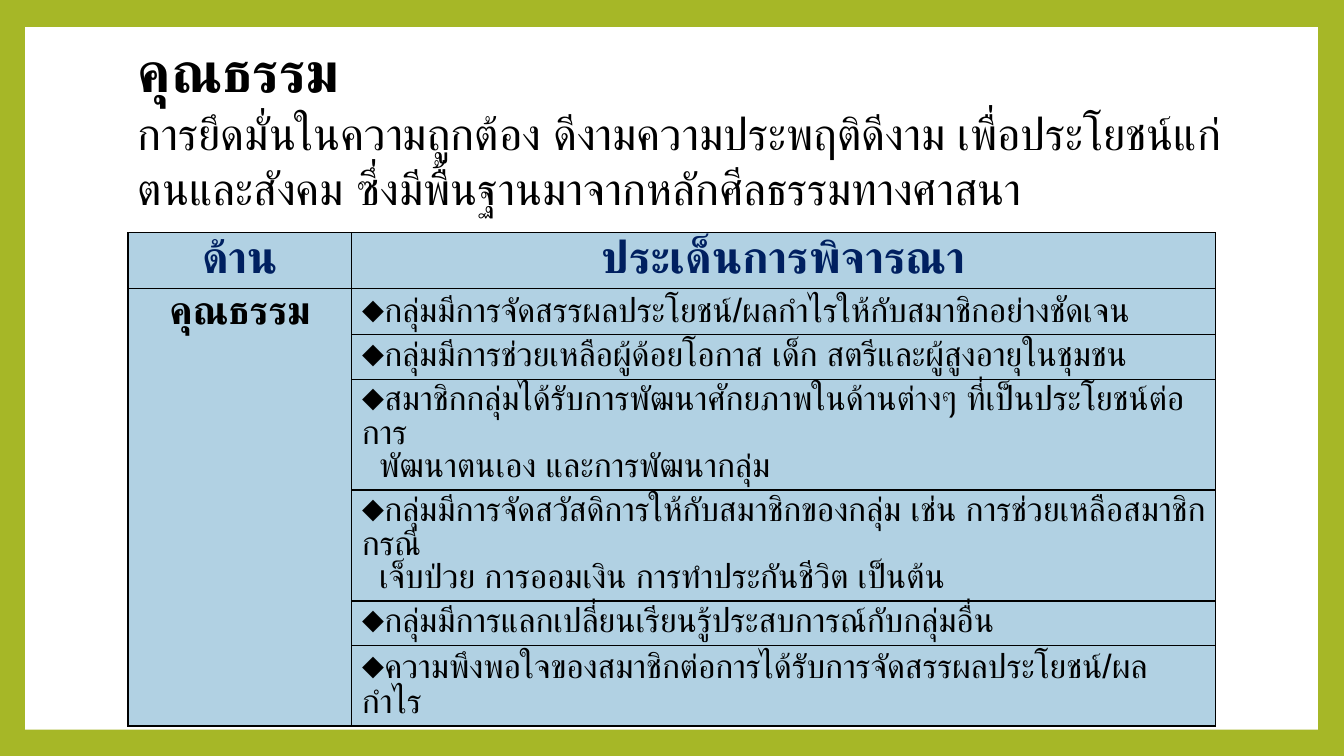
from pptx import Presentation
from pptx.dml.color import RGBColor
from pptx.enum.shapes import MSO_SHAPE
from pptx.enum.text import PP_ALIGN
from pptx.oxml import parse_xml
from pptx.oxml.ns import nsdecls
from pptx.util import Inches, Pt
from lxml.etree import SubElement
from pptx.oxml.ns import qn

COLORS = {
    "frame": "A6B727",
    "paper": "FFFFFF",
    "cell": "B1D1E3",
    "ink": "000000",
    "header": "002060",
}
FONT = "Arial"
LEFT = 1.27
COLUMNS = [2.22, 8.57]
INDENT = 0.17

TITLE = "คุณธรรม"
DEFINITION = (
    "การยึดมั่นในความถูกต้อง ดีงามความประพฤติดีงาม เพื่อประโยชน์แก่ตนและสังคม "
    "ซึ่งมีพื้นฐานมาจากหลักศีลธรรมทางศาสนา"
)
HEADERS = ["ด้าน", "ประเด็นการพิจารณา"]
HEADER_HEIGHT = 0.55
CRITERIA = [
    (0.46, 26, ["⬥กลุ่มมีการจัดสรรผลประโยชน์/ผลกำไรให้กับสมาชิกอย่างชัดเจน"]),
    (0.44, 24, ["⬥กลุ่มมีการช่วยเหลือผู้ด้อยโอกาส เด็ก สตรีและผู้สูงอายุในชุมชน"]),
    (1.1, 24, ["⬥สมาชิกกลุ่มได้รับการพัฒนาศักยภาพในด้านต่างๆ ที่เป็นประโยชน์ต่อการ",
               "พัฒนาตนเอง และการพัฒนากลุ่ม"]),
    (1.1, 24, ["⬥กลุ่มมีการจัดสวัสดิการให้กับสมาชิกของกลุ่ม เช่น การช่วยเหลือสมาชิกกรณี",
               "เจ็บป่วย การออมเงิน การทำประกันชีวิต เป็นต้น"]),
    (0.44, 24, ["⬥กลุ่มมีการแลกเปลี่ยนเรียนรู้ประสบการณ์กับกลุ่มอื่น"]),
    (0.8, 25, ["⬥ความพึงพอใจของสมาชิกต่อการได้รับการจัดสรรผลประโยชน์/ผลกำไร"]),
]


def rgb(name):
    return RGBColor.from_string(COLORS[name])


def write(p, text, size, leading, color="ink", bold=False, align=PP_ALIGN.LEFT):
    for key, value in {"alignment": align, "line_spacing": Pt(leading),
                       "space_before": Pt(0), "space_after": Pt(0)}.items():
        setattr(p, key, value)
    r = p.add_run()
    r.text = text
    for key, value in {"name": FONT, "size": Pt(size), "bold": bold}.items():
        setattr(r.font, key, value)
    r.font.color.rgb = rgb(color)
    SubElement(r.font._element, qn("a:cs")).set("typeface", FONT)


def add_paper(s):
    sp = s.shapes.add_shape(MSO_SHAPE.RECTANGLE, Inches(0.25), Inches(0.27),
                            Inches(12.82), Inches(6.97))
    sp.shadow.inherit = False
    sp.fill.solid()
    sp.fill.fore_color.rgb = rgb("paper")
    sp.line.fill.background()


def style_cell(cell):
    tcPr = cell._tc.get_or_add_tcPr()
    for side in ("lnL", "lnR", "lnT", "lnB"):
        tcPr.append(parse_xml(
            f'<a:{side} {nsdecls("a")} w="12700"><a:solidFill>'
            f'<a:srgbClr val="{COLORS["ink"]}"/></a:solidFill></a:{side}>'))
    cell.fill.solid()
    cell.fill.fore_color.rgb = rgb("cell")


def add_criteria_table(s):
    heights = [HEADER_HEIGHT] + [height for height, _, _ in CRITERIA]
    frame = s.shapes.add_table(len(heights), len(COLUMNS), Inches(LEFT), Inches(2.31),
                               Inches(sum(COLUMNS)), Inches(sum(heights)))
    table = frame.table
    table.first_row = table.horz_banding = False
    for column, width in zip(table.columns, COLUMNS):
        column.width = Inches(width)
    for row, height in zip(table.rows, heights):
        row.height = Inches(height)
        for cell in row.cells:
            style_cell(cell)

    for col, header in enumerate(HEADERS):
        write(table.cell(0, col).text_frame.paragraphs[0], header, 32, 32,
              "header", True, PP_ALIGN.CENTER)
    table.cell(1, 0).merge(table.cell(len(CRITERIA), 0))
    write(table.cell(1, 0).text_frame.paragraphs[0], TITLE, 28, 28,
          bold=True, align=PP_ALIGN.CENTER)
    for row, (_, leading, lines) in enumerate(CRITERIA, start=1):
        tf = table.cell(row, 1).text_frame
        write(tf.paragraphs[0], lines[0], 24, leading)
        for line in lines[1:]:
            p = tf.add_paragraph()
            write(p, line, 24, leading)
            p._p.get_or_add_pPr().set("marL", str(Inches(INDENT)))


def add_definition(s):
    sp = s.shapes.add_textbox(Inches(LEFT), Inches(0.33), Inches(11.37), Inches(1.85))
    tf = sp.text_frame
    tf.word_wrap = True
    write(tf.paragraphs[0], TITLE, 40, 47, bold=True)
    write(tf.add_paragraph(), DEFINITION, 32, 39.4)


def main():
    prs = Presentation()
    prs.slide_width, prs.slide_height = Inches(13.33), Inches(7.5)
    s = prs.slides.add_slide(prs.slide_layouts[6])
    s.background.fill.solid()
    s.background.fill.fore_color.rgb = rgb("frame")
    add_paper(s)
    add_criteria_table(s)
    add_definition(s)
    prs.save("out.pptx")


if __name__ == "__main__":
    main()
